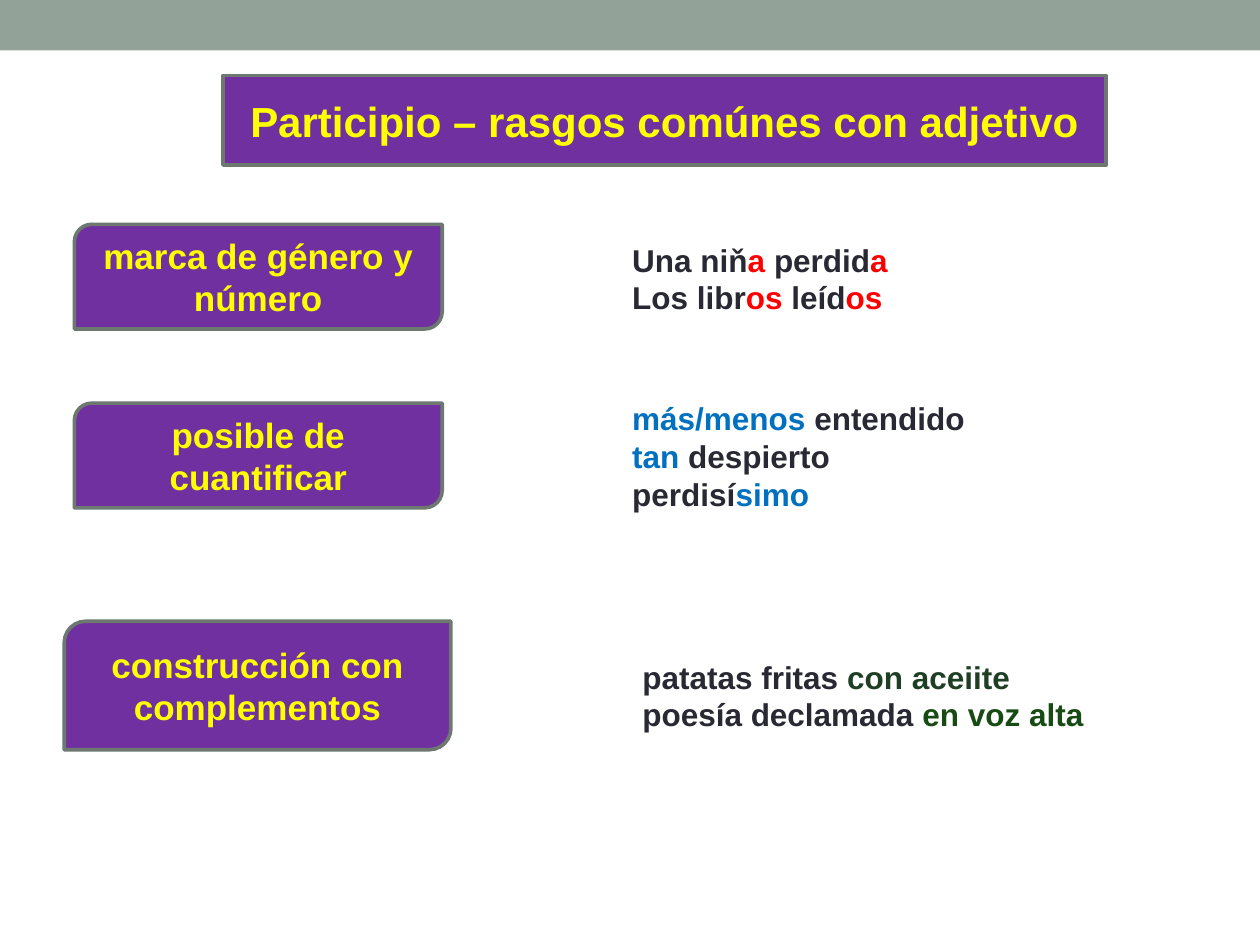
from lxml.etree import SubElement
from pptx import Presentation
from pptx.dml.color import RGBColor
from pptx.enum.shapes import MSO_SHAPE as Kind
from pptx.enum.text import MSO_ANCHOR as Anchor, MSO_AUTO_SIZE as Fit, PP_ALIGN as Align
from pptx.oxml.ns import qn
from pptx.util import Pt

DARK, RED, BLUE, YELLOW = "292934", "FF0000", "0070C0", "FFFF00"
PURPLE, EDGE, SAGE = "7030A0", "6D7871", "93A299"

TITLE = ("Participio – rasgos comúnes con adjetivo", (127.4, 43.2, 504.7, 51.1))
TRAITS = [
    ("marca de género y número", (42.5, 128.2, 210.2, 59.8)),
    ("posible de cuantificar", (42.5, 230.4, 210.2, 59.8)),
    ("construcción con complementos", (36.7, 355, 221, 73.4)),
]
SAMPLES = [
    ((354.2, 133.9, 181.4, 51.1), [
        [("Una niň", DARK), ("a ", RED), ("perdid", DARK), ("a", RED)],
        [("Los libr", DARK), ("os ", RED), ("leíd", DARK), ("os", RED)],
    ]),
    ((354.2, 224.6, 244.1, 72.7), [
        [("más/menos ", BLUE), ("entendido", DARK)],
        [("tan ", BLUE), ("despierto", DARK)],
        [("perdisí", DARK), ("simo", BLUE)],
    ]),
    ((360, 372.2, 266.4, 51.1), [
        [("patatas fritas ", DARK), ("con aceiite", "1F3F24")],
        [("poesía declamada ", DARK), ("en voz alta", "184A14")],
    ]),
]


def color(code):
    return RGBColor.from_string(code)


def paint(fill, code):
    fill.solid()
    fill.fore_color.rgb = color(code)


def add_run(para, text, size, code):
    run = para.add_run()
    run.text = text
    look = {"name": "Arial", "size": Pt(size), "bold": True}
    for key, value in look.items():
        setattr(run.font, key, value)
    run.font.color.rgb = color(code)


def place(shape, box):
    for key, value in zip(("left", "top", "width", "height"), box):
        setattr(shape, key, Pt(value))


def style_label(shape, text, size):
    paint(shape.fill, PURPLE)
    shape.line.color.rgb = color(EDGE)
    shape.line.width = Pt(2.08)
    frame = shape.text_frame
    look = {"word_wrap": True, "auto_size": Fit.NONE, "vertical_anchor": Anchor.MIDDLE}
    for key, value in look.items():
        setattr(frame, key, value)
    para = frame.paragraphs[0]
    para.alignment = Align.CENTER
    add_run(para, text, size, YELLOW)


def add_shape(slide, kind, box):
    shape = slide.shapes.add_shape(kind, *map(Pt, box))
    shape.shadow.inherit = False
    return shape


def add_sample(slide, box, lines):
    frame = slide.shapes.add_textbox(*map(Pt, box)).text_frame
    frame.word_wrap = True
    frame.auto_size = Fit.SHAPE_TO_FIT_TEXT
    for i, line in enumerate(lines):
        para = frame.add_paragraph() if i else frame.paragraphs[0]
        for text, code in line:
            add_run(para, text, 18, code)


def main():
    deck = Presentation()
    deck.slide_width, deck.slide_height = Pt(720), Pt(540)
    slide = deck.slides.add_slide(deck.slide_layouts[5])

    bar = add_shape(slide, Kind.RECTANGLE, (0, 0, 720, 28.8))
    paint(bar.fill, SAGE)
    bar.line.fill.background()

    text, box = TITLE
    title = slide.shapes.title
    place(title, box)
    shape_xml = title.element.spPr
    geom = SubElement(shape_xml, qn("a:prstGeom"), prst="round2DiagRect")
    SubElement(geom, qn("a:avLst"))
    style_label(title, text, 24)

    for text, box in TRAITS:
        style_label(add_shape(slide, Kind.ROUND_2_DIAG_RECTANGLE, box), text, 20)
    for box, lines in SAMPLES:
        add_sample(slide, box, lines)

    deck.save("out.pptx")


if __name__ == "__main__":
    main()
